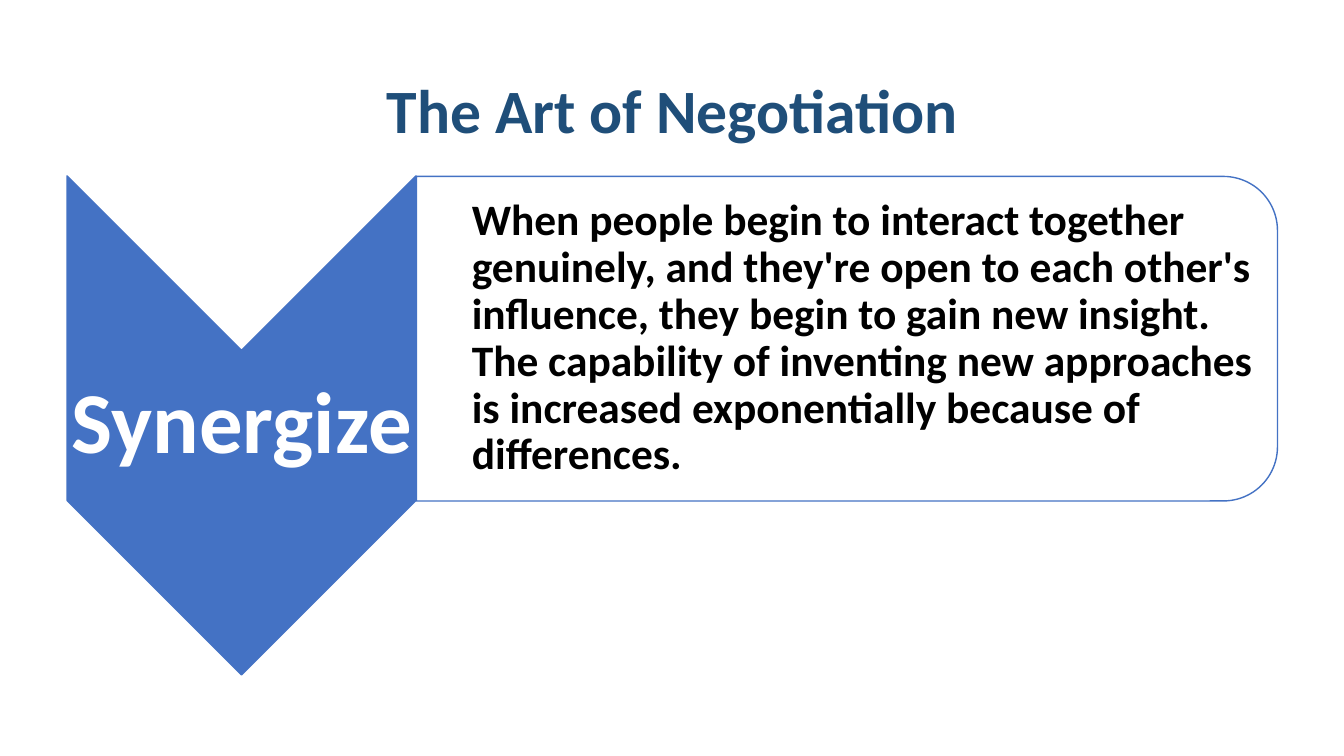
from pptx import Presentation
from pptx.util import Inches, Pt
from pptx.dml.color import RGBColor
from pptx.enum.shapes import MSO_SHAPE
from pptx.enum.text import PP_ALIGN, MSO_ANCHOR, MSO_AUTO_SIZE
from pptx.oxml.ns import qn
from lxml.etree import SubElement

NAVY = RGBColor(0x1F, 0x4E, 0x79)
BLUE = RGBColor(0x44, 0x72, 0xC4)
WHITE = RGBColor(0xFF, 0xFF, 0xFF)
BLACK = RGBColor(0, 0, 0)


def add_block(kind, left, top, width, height, fill):
    block = slide.shapes.add_shape(
        kind, Inches(left), Inches(top), Inches(width), Inches(height))
    block.rotation = 90
    block.shadow.inherit = False
    block.fill.solid()
    block.fill.fore_color.rgb = fill
    block.line.color.rgb = BLUE
    block.line.width = Pt(1)
    return block


def set_text(shape, text, size, color, align):
    frame = shape.text_frame
    frame.text = text
    frame.word_wrap = True
    frame.auto_size = MSO_AUTO_SIZE.NONE
    frame.vertical_anchor = MSO_ANCHOR.MIDDLE
    para = frame.paragraphs[0]
    para.alignment = align
    para.line_spacing = 0.9
    font = para.runs[0].font
    font.name = "Calibri"
    font.size = Pt(size)
    font.bold = True
    font.color.rgb = color
    return frame


deck = Presentation()
deck.slide_width = Inches(13.33)
deck.slide_height = Inches(7.5)
slide = deck.slides.add_slide(deck.slide_layouts[5])

title = slide.shapes.title
title.left, title.top = Inches(0.92), Inches(0.4)
title.width, title.height = Inches(11.5), Inches(1.45)
set_text(title, "The Art of Negotiation", 44, NAVY, PP_ALIGN.CENTER)

add_block(MSO_SHAPE.CHEVRON, -0.08, 2.49, 4.95, 3.46, BLUE)
label = slide.shapes.add_textbox(
    Inches(0.67), Inches(3.48), Inches(3.46), Inches(1.48))
frame = set_text(label, "Synergize", 62, WHITE, PP_ALIGN.CENTER)
frame.margin_left = frame.margin_right = Inches(0.04)
frame.margin_top = frame.margin_bottom = Inches(0.04)

panel = add_block(
    MSO_SHAPE.ROUND_2_SAME_RECTANGLE, 6.79, -0.91, 3.22, 8.54, WHITE)
tint = panel.fill._xPr.find(qn("a:solidFill"))[0]
SubElement(tint, qn("a:alpha")).set("val", "90000")

body = slide.shapes.add_textbox(
    Inches(4.13), Inches(1.91), Inches(8.38), Inches(2.9))
frame = set_text(
    body,
    "When people begin to interact together genuinely, and they're open to "
    "each other's influence, they begin to gain new insight. The capability "
    "of inventing new approaches is increased exponentially because of "
    "differences.",
    31, BLACK, PP_ALIGN.LEFT)
frame.margin_left = Inches(0.55)
frame.margin_right = frame.margin_top = frame.margin_bottom = Inches(0.02)

deck.save("out.pptx")
